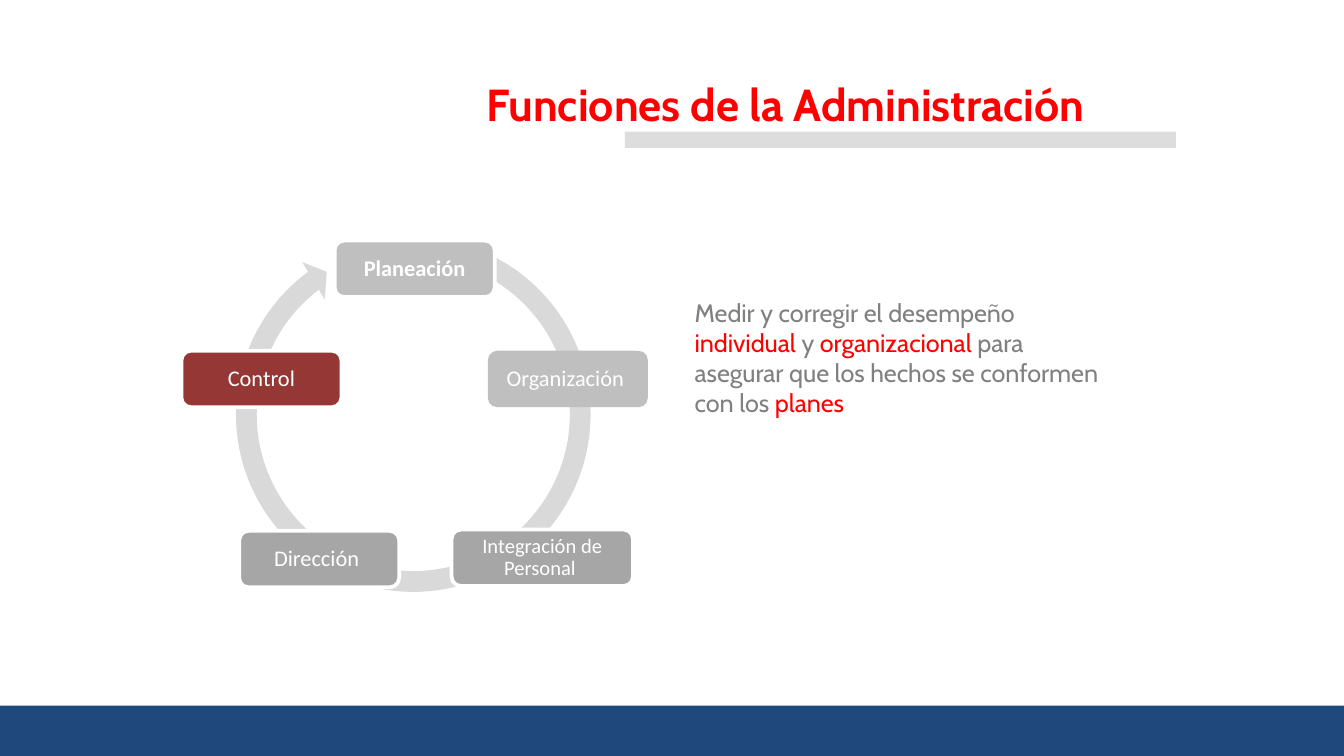
import pptx
import pptx.util
import pptx.dml.color
import pptx.enum.shapes
import pptx.enum.text

Inches = pptx.util.Inches
Pt = pptx.util.Pt
RGBColor = pptx.dml.color.RGBColor
SHAPE = pptx.enum.shapes.MSO_SHAPE
ALIGN = pptx.enum.text.PP_ALIGN
ANCHOR = pptx.enum.text.MSO_ANCHOR

WHITE = RGBColor(0xFF, 0xFF, 0xFF)
RED = RGBColor(0xFF, 0x00, 0x00)
NAVY = RGBColor(0x1F, 0x49, 0x7D)
MAROON = RGBColor(0x95, 0x37, 0x35)
TEXT_GRAY = RGBColor(0x80, 0x80, 0x80)
RULE_GRAY = RGBColor(0xDD, 0xDD, 0xDD)
ARROW_GRAY = RGBColor(0xD9, 0xD9, 0xD9)
LIGHT_GRAY = RGBColor(0xBF, 0xBF, 0xBF)
MID_GRAY = RGBColor(0xA6, 0xA6, 0xA6)

SLIDE_WIDTH = 10
SLIDE_HEIGHT = SLIDE_WIDTH * 9 / 16
FOOTER_TOP = 5.25
BOX_HEIGHT = 0.42
ARROW_ADJUSTMENTS = (0.055, 3.307, 139.963, 172.533, 0.058)

# Label, left, top, width, fill, outlined, font size, bold
FUNCTIONS = (
    ("Planeación", 2.49, 1.79, 1.19, LIGHT_GRAY, True, 12, True),
    ("Organización ", 3.63, 2.61, 1.19, LIGHT_GRAY, False, 12, False),
    ("Integración de Personal ", 3.36, 3.94, 1.35, MID_GRAY, True, 11, False),
    ("Dirección ", 1.78, 3.95, 1.19, MID_GRAY, True, 12, False),
    ("Control", 1.35, 2.61, 1.19, MAROON, True, 12, False),
)

DEFINITION = (
    ("Medir y corregir el desempeño ", TEXT_GRAY),
    ("individual", RED),
    (" y ", TEXT_GRAY),
    ("organizacional", RED),
    (" para asegurar que los hechos se conformen con los", TEXT_GRAY),
    (" planes", RED),
)


def set_attributes(target, values):
    for attribute, value in values.items():
        setattr(target, attribute, value)


def add_run(paragraph, text, color, **font_format):
    run = paragraph.add_run()
    run.text = text
    set_attributes(run.font, font_format)
    run.font.color.rgb = color


def add_filled_shape(slide, preset, left, top, width, height, fill):
    shape = slide.shapes.add_shape(
        preset, Inches(left), Inches(top), Inches(width), Inches(height))
    shape.shadow.inherit = False
    shape.fill.solid()
    shape.fill.fore_color.rgb = fill
    shape.line.fill.background()
    return shape


def add_text(slide, left, top, width, height, runs, **font_format):
    box = slide.shapes.add_textbox(
        Inches(left), Inches(top), Inches(width), Inches(height))
    box.text_frame.word_wrap = True
    for text, color in runs:
        add_run(box.text_frame.paragraphs[0], text, color,
                name="Cabin", **font_format)


def add_cycle_arrow(slide):
    arrow = add_filled_shape(
        slide, SHAPE.CIRCULAR_ARROW, 1.67, 1.68, 2.81, 2.81, ARROW_GRAY)
    for index, value in enumerate(ARROW_ADJUSTMENTS):
        arrow.adjustments[index] = value


def add_function_box(slide, label, left, top, width, fill, outlined, size, bold):
    box = add_filled_shape(
        slide, SHAPE.ROUNDED_RECTANGLE, left, top, width, BOX_HEIGHT, fill)
    if outlined:
        box.line.color.rgb = WHITE
        box.line.width = Pt(2)
    margin = Inches(0.07)
    set_attributes(box.text_frame, {
        "word_wrap": True,
        "vertical_anchor": ANCHOR.MIDDLE,
        "margin_left": margin,
        "margin_right": margin,
        "margin_top": margin,
        "margin_bottom": margin,
    })
    paragraph = box.text_frame.paragraphs[0]
    set_attributes(paragraph, {"alignment": ALIGN.CENTER, "line_spacing": 0.9})
    add_run(paragraph, label, WHITE, name="Calibri", size=Pt(size), bold=bold)


def main():
    presentation = pptx.Presentation()
    set_attributes(presentation, {
        "slide_width": Inches(SLIDE_WIDTH),
        "slide_height": Inches(SLIDE_HEIGHT),
    })
    slide = presentation.slides.add_slide(presentation.slide_layouts[6])

    # Footer band, title rule and title
    add_filled_shape(slide, SHAPE.RECTANGLE, 0, FOOTER_TOP, SLIDE_WIDTH,
                     SLIDE_HEIGHT - FOOTER_TOP, NAVY)
    add_filled_shape(slide, SHAPE.RECTANGLE, 4.65, 0.98, 4.1, 0.12, RULE_GRAY)
    add_text(slide, 3.52, 0.52, 5.52, 0.5,
             [("Funciones de la Administración", RED)], size=Pt(24), bold=True)

    # Cycle of functions
    add_cycle_arrow(slide)
    for function in FUNCTIONS:
        add_function_box(slide, *function)

    # Definition of the highlighted function
    add_text(slide, 5.07, 2.16, 3.25, 1.24, DEFINITION, size=Pt(13.5))

    presentation.save("out.pptx")


if __name__ == "__main__":
    main()
